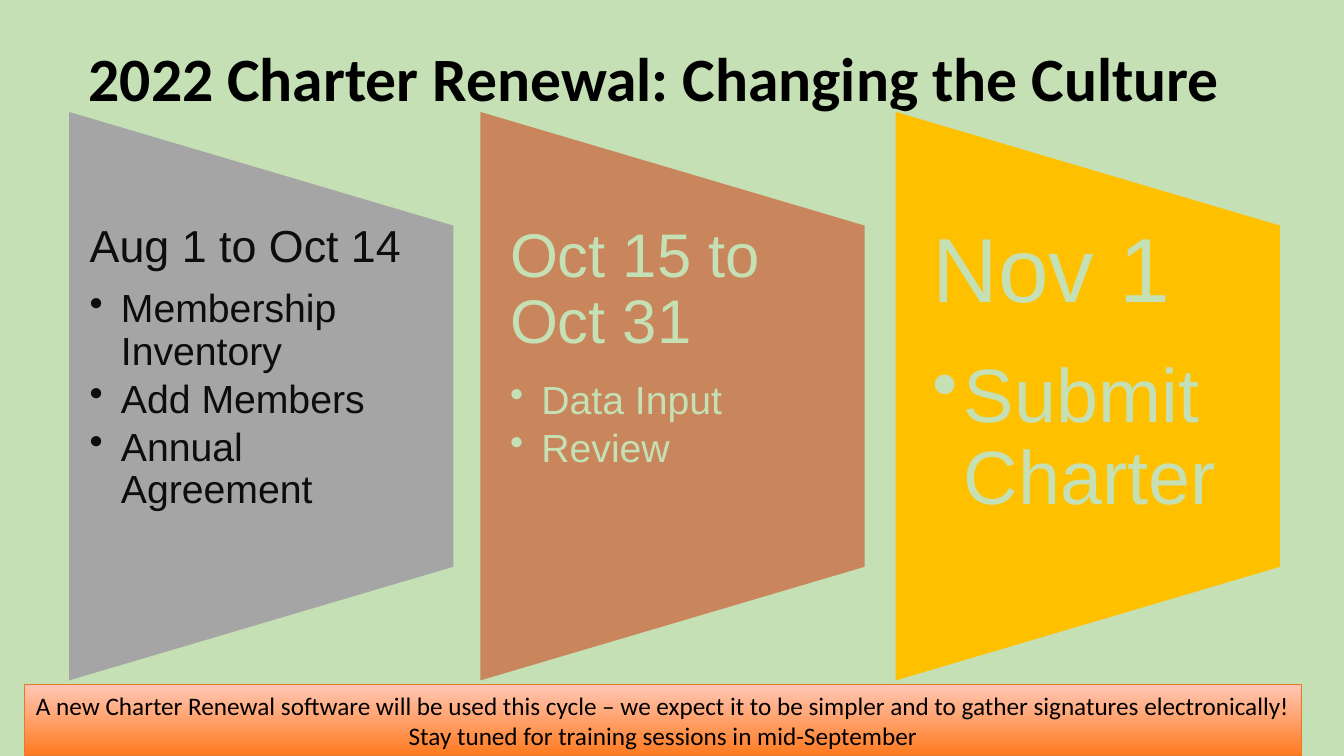
from lxml import etree
from pptx import Presentation
from pptx.dml.color import RGBColor
from pptx.enum.shapes import MSO_SHAPE
from pptx.enum.text import MSO_ANCHOR, PP_ALIGN
from pptx.oxml.ns import qn
from pptx.util import Inches, Pt

MANUAL_OPERATION = MSO_SHAPE.FLOWCHART_MANUAL_OPERATION
RECTANGLE = MSO_SHAPE.RECTANGLE
TOP, MIDDLE = MSO_ANCHOR.TOP, MSO_ANCHOR.MIDDLE
LEFT, CENTER = PP_ALIGN.LEFT, PP_ALIGN.CENTER

PALE_GREEN = RGBColor(0xC5, 0xE0, 0xB4)
BLACK = RGBColor(0, 0, 0)
NEAR_BLACK = RGBColor(0x0D, 0x0D, 0x0D)
GREY = RGBColor(0xA5, 0xA5, 0xA5)
CLAY = RGBColor(0xC9, 0x86, 0x5C)
GOLD = RGBColor(0xFF, 0xC0, 0x00)
ORANGE = RGBColor(0xFF, 0x7A, 0x1F)
PEACH = RGBColor(0xFF, 0xC7, 0xB6)
DARK_ORANGE = RGBColor(0xEC, 0x79, 0x2B)

PANEL_TOP, PANEL_WIDTH, PANEL_HEIGHT = 1.09, 3.84, 5.68
PHASES = [
    (0.67, GREY, NEAR_BLACK, 0.22, "Aug 1 to Oct 14", 32,
     ["Membership Inventory", "Add Members", "Annual Agreement"], 28),
    (4.75, CLAY, PALE_GREEN, 0.31, "Oct 15 to Oct 31", 44,
     ["Data Input", "Review"], 28),
    (8.87, GOLD, PALE_GREEN, 0.38, "Nov 1", 65, ["Submit Charter"], 54),
]
NOTICE = [
    "A new Charter Renewal software will be used this cycle – we expect it "
    "to be simpler and to gather signatures electronically!",
    "Stay tuned for training sessions in mid-September",
]


def set_frame(frame, side=0.05, vertical=0.05, anchor=TOP):
    """Set wrapping, margins in inches and anchor of a text frame."""
    frame.word_wrap = True
    frame.margin_left = frame.margin_right = Inches(side)
    frame.margin_top = frame.margin_bottom = Inches(vertical)
    frame.vertical_anchor = anchor


def write(frame, text, *, size, color, font="Calibri", bold=False, align=LEFT,
          spacing=1.0, after=0, bullet=False):
    """Write one formatted paragraph at the end of a text frame."""
    first = frame.paragraphs[0]
    paragraph = first if not first.runs else frame.add_paragraph()
    if bullet:
        properties = paragraph._p.get_or_add_pPr()
        properties.set("marL", str(Inches(0.31)))
        properties.set("indent", str(-Inches(0.31)))
        etree.SubElement(properties, qn("a:buChar")).set("char", "•")
    paragraph.alignment = align
    paragraph.line_spacing = spacing
    paragraph.space_after = Pt(after)
    run = paragraph.add_run()
    run.text = text
    run.font.name = font
    run.font.size = Pt(size)
    run.font.bold = bold
    run.font.color.rgb = color


def add_title(slide, text):
    """Add the slide heading."""
    box = slide.shapes.add_textbox(Inches(0.83), Inches(0.08), Inches(11.5), Inches(1.45))
    set_frame(box.text_frame, anchor=MIDDLE)
    write(box.text_frame, text, size=44, color=BLACK, bold=True, spacing=0.9)


def add_phase(slide, left, fill, color, inset, dates, dates_size, tasks, task_size):
    """Add one tapering panel with its dates and bulleted tasks."""
    shift = (PANEL_HEIGHT - PANEL_WIDTH) / 2
    panel = slide.shapes.add_shape(
        MANUAL_OPERATION, Inches(left - shift), Inches(PANEL_TOP + shift),
        Inches(PANEL_HEIGHT), Inches(PANEL_WIDTH))
    panel.rotation = 270
    panel.shadow.inherit = False
    panel.fill.solid()
    panel.fill.fore_color.rgb = fill
    panel.line.color.rgb = PALE_GREEN
    panel.line.width = Pt(2)

    label = slide.shapes.add_textbox(
        Inches(left), Inches(2.22), Inches(PANEL_WIDTH), Inches(3.41)).text_frame
    set_frame(label, side=inset, vertical=0)
    style = {"color": color, "font": "Arial", "spacing": 0.9}
    write(label, dates, size=dates_size, after=round(dates_size * 0.38), **style)
    for task in tasks:
        write(label, task, size=task_size, after=round(task_size * 0.15),
              bullet=True, **style)


def add_notice(slide, lines):
    """Add the gradient banner along the bottom edge."""
    banner = slide.shapes.add_shape(
        RECTANGLE, Inches(0.24), Inches(6.79), Inches(12.67), Inches(0.71))
    banner.shadow.inherit = False
    banner.fill.gradient()
    banner.fill.gradient_angle = 90
    for stop, color, position in zip(banner.fill.gradient_stops, (ORANGE, PEACH), (0, 1)):
        stop.color.rgb = color
        stop.position = position
    banner.line.color.rgb = DARK_ORANGE
    banner.line.width = Pt(0.75)
    set_frame(banner.text_frame, anchor=MIDDLE)
    for line in lines:
        write(banner.text_frame, line, size=18, color=BLACK, align=CENTER)


def main():
    """Build the charter renewal slide."""
    deck = Presentation()
    deck.slide_width, deck.slide_height = Inches(13.33), Inches(7.5)
    slide = deck.slides.add_slide(deck.slide_layouts[6])
    slide.background.fill.solid()
    slide.background.fill.fore_color.rgb = PALE_GREEN
    add_title(slide, "2022 Charter Renewal: Changing the Culture")
    for phase in PHASES:
        add_phase(slide, *phase)
    add_notice(slide, NOTICE)
    deck.save("out.pptx")


if __name__ == "__main__":
    main()
